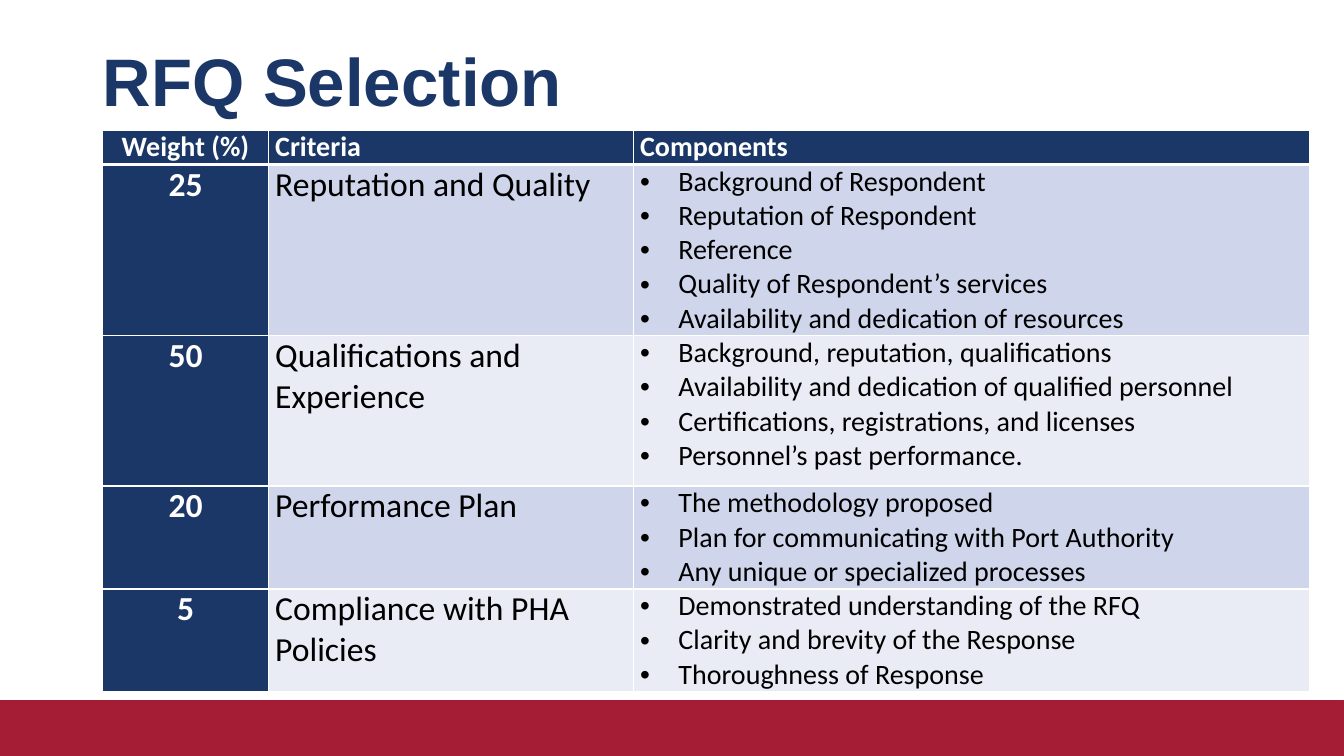
from lxml.etree import SubElement
from pptx import Presentation
from pptx.dml.color import RGBColor
from pptx.enum.shapes import MSO_SHAPE
from pptx.enum.text import MSO_ANCHOR, MSO_AUTO_SIZE, PP_ALIGN
from pptx.oxml.ns import qn
from pptx.util import Inches, Pt

NAVY = RGBColor(0x1B, 0x37, 0x67)
RED = RGBColor(0xA5, 0x1D, 0x35)
WHITE = RGBColor(0xFF, 0xFF, 0xFF)
BLACK = RGBColor(0x00, 0x00, 0x00)
BANDS = RGBColor(0xCF, 0xD5, 0xEA), RGBColor(0xE9, 0xEB, 0xF5)

HEADS = ["Weight (%)", "Criteria", "Components"]
ROWS = [
    ("25", "Reputation and Quality", [
        "Background of Respondent",
        "Reputation of Respondent",
        "Reference",
        "Quality of Respondent’s services",
        "Availability and dedication of resources"]),
    ("50", "Qualifications and Experience", [
        "Background, reputation, qualifications",
        "Availability and dedication of qualified personnel",
        "Certifications, registrations, and licenses",
        "Personnel’s past performance."]),
    ("20", "Performance Plan", [
        "The methodology proposed",
        "Plan for communicating with Port Authority",
        "Any unique or specialized processes"]),
    ("5", "Compliance with PHA Policies", [
        "Demonstrated understanding of the RFQ",
        "Clarity and brevity of the Response",
        "Thoroughness of Response"]),
]
WIDTHS = [1.64, 3.62, 6.71]
HEIGHTS = [0.34, 1.7, 1.49, 1.02, 1.02]


def write(frame, lines, size, color, bold=False, font="Calibri",
          align=PP_ALIGN.LEFT, bullet=False, space=1.0):
    """Fill a text frame, one paragraph for each line."""
    for i, line in enumerate(lines):
        para = frame.add_paragraph() if i else frame.paragraphs[0]
        if bullet:
            props = para._p.get_or_add_pPr()
            props.set("marL", str(Inches(0.38)))
            props.set("indent", str(-Inches(0.38)))
            SubElement(props, qn("a:buFont")).set("typeface", "Arial")
            SubElement(props, qn("a:buChar")).set("char", "•")
        para.alignment = align
        para.line_spacing = space
        para.space_before = Pt(0)
        run = para.add_run()
        run.text = line
        run.font.name = font
        run.font.size = Pt(size)
        run.font.bold = bold
        run.font.color.rgb = color


class Deck:
    """Holds the file, the current slide and the shared style."""

    def __init__(self):
        self.file = Presentation()
        self.file.slide_width = Inches(13.33)
        self.file.slide_height = Inches(7.5)
        self.slide = self.file.slides.add_slide(self.file.slide_layouts[5])

    def title(self, text, x, y, w, h):
        shape = self.slide.shapes.title
        shape.left, shape.top = Inches(x), Inches(y)
        shape.width, shape.height = Inches(w), Inches(h)
        frame = shape.text_frame
        frame.auto_size = MSO_AUTO_SIZE.NONE
        frame.word_wrap = True
        frame.vertical_anchor = MSO_ANCHOR.MIDDLE
        write(frame, [text], 48, NAVY, bold=True, font="Arial", space=0.9)

    def bar(self, x, y, w, h):
        shape = self.slide.shapes.add_shape(
            MSO_SHAPE.RECTANGLE, Inches(x), Inches(y), Inches(w), Inches(h))
        shape.shadow.inherit = False
        shape.fill.solid()
        shape.fill.fore_color.rgb = RED
        shape.line.color.rgb = RED
        shape.line.width = Pt(0.75)

    def table(self, x, y, widths, heights):
        grid = self.slide.shapes.add_table(
            len(heights), len(widths), Inches(x), Inches(y),
            Inches(sum(widths)), Inches(sum(heights))).table
        grid.horz_banding = False
        for col, width in zip(grid.columns, widths):
            col.width = Inches(width)
        for row, height in zip(grid.rows, heights):
            row.height = Inches(height)
        return grid

    def cell(self, grid, row, col, lines, size, fill, color, **style):
        cell = grid.cell(row, col)
        cell.margin_left = cell.margin_right = Inches(0.07)
        cell.margin_top = cell.margin_bottom = 0
        self.edge(cell, row)
        cell.fill.solid()
        cell.fill.fore_color.rgb = fill
        write(cell.text_frame, lines, size, color, **style)

    def edge(self, cell, row):
        """Draw white cell borders, thicker under the header row."""
        props = cell._tc.get_or_add_tcPr()
        thick = {(0, "B"), (1, "T")}
        for side in "LRTB":
            line = SubElement(props, qn(f"a:ln{side}"))
            line.set("w", str(Pt(3 if (row, side) in thick else 1)))
            paint = SubElement(line, qn("a:solidFill"))
            SubElement(paint, qn("a:srgbClr")).set("val", str(WHITE))


def main():
    deck = Deck()
    deck.bar(0, 6.95, 13.33, 0.55)
    deck.title("RFQ Selection", 0.92, 0.4, 11.5, 0.89)
    grid = deck.table(1.02, 1.29, WIDTHS, HEIGHTS)
    for col, head in enumerate(HEADS):
        align = PP_ALIGN.JUSTIFY if col else PP_ALIGN.CENTER
        deck.cell(grid, 0, col, [head], 20, NAVY, WHITE, bold=True, align=align)
    for row, (weight, topic, parts) in enumerate(ROWS, 1):
        band = BANDS[(row - 1) % 2]
        deck.cell(grid, row, 0, [weight], 24, NAVY, WHITE, bold=True,
                  align=PP_ALIGN.CENTER)
        deck.cell(grid, row, 1, [topic], 24, band, BLACK)
        deck.cell(grid, row, 2, parts, 20, band, BLACK, bullet=True,
                  align=PP_ALIGN.LEFT if row == 1 else PP_ALIGN.JUSTIFY)
    deck.file.save("out.pptx")


if __name__ == "__main__":
    main()
